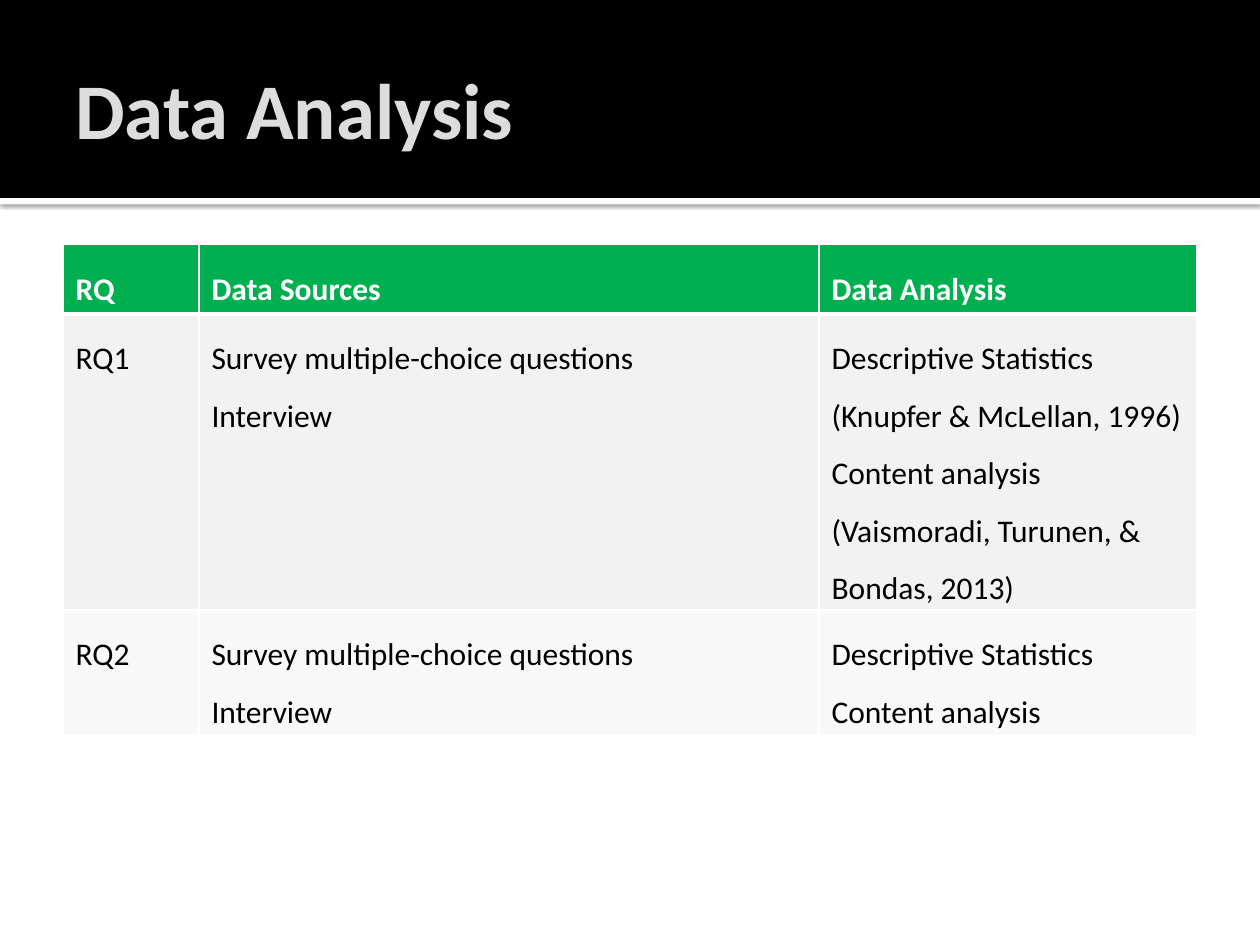
"""Build the Data Analysis slide: a black title band over a table of research questions."""
from lxml import etree
from pptx import Presentation
from pptx.dml.color import RGBColor
from pptx.enum.shapes import MSO_SHAPE
from pptx.enum.text import MSO_ANCHOR
from pptx.oxml import parse_xml
from pptx.util import Cm, Pt

RECT = MSO_SHAPE.RECTANGLE
MIDDLE = MSO_ANCHOR.MIDDLE
NS = 'xmlns:a="http://schemas.openxmlformats.org/drawingml/2006/main"'


def rgb(value):
    return RGBColor.from_string(value)


def add_text(tf, lines, size=18, color="000000", bold=False, spacing=1.0):
    for i, line in enumerate(lines):
        p = tf.paragraphs[0] if i == 0 else tf.add_paragraph()
        p.line_spacing = spacing
        r = p.add_run()
        r.text = line
        r.font.name = "Calibri"
        r.font.size = Pt(size)
        r.font.bold = bold
        r.font.color.rgb = rgb(color)


prs = Presentation()
prs.slide_width, prs.slide_height = Cm(25.4), Cm(19.05)
s = prs.slides.add_slide(prs.slide_layouts[6])

for top, height, color in [(3.99, 0.13, "FFFFFF"), (0, 3.99, "000000")]:
    sp = s.shapes.add_shape(RECT, 0, Cm(top), prs.slide_width, Cm(height))
    sp.shadow.inherit = False
    sp.fill.solid()
    sp.fill.fore_color.rgb = rgb(color)
    sp.line.fill.background()

strip = s.shapes[0]
strip.shadow.inherit = False
effects = strip.element.spPr.find("{*}effectLst")
effects.append(parse_xml(
    f'<a:outerShdw {NS} blurRad="31750" dist="10160" dir="5400000" rotWithShape="0">'
    '<a:srgbClr val="000000"><a:alpha val="60000"/></a:srgbClr></a:outerShdw>'))

title = s.shapes.add_textbox(Cm(1.27), Cm(0.43), Cm(22.86), Cm(3.48))
tf = title.text_frame
tf.word_wrap = True
tf.vertical_anchor = MIDDLE
tf.margin_left = Cm(0.25)
tf.margin_right = tf.margin_top = tf.margin_bottom = Cm(0.13)
add_text(tf, ["Data Analysis"], size=45, color="DDDDDD", bold=True)

sources = ["Survey multiple-choice questions", "Interview"]
rows = [
    (["RQ"], ["Data Sources"], ["Data Analysis"]),
    (["RQ1"], sources, ["Descriptive Statistics (Knupfer & McLellan, 1996)",
                        "Content analysis (Vaismoradi, Turunen, & Bondas, 2013)"]),
    (["RQ2"], sources, ["Descriptive Statistics", "Content analysis"]),
]
fills = ["00B050", "F2F2F2", "F9F9F9"]
widths = [2.74, 12.5, 7.62]
row_height = Cm(1.04)

table = s.shapes.add_table(len(rows), len(widths), Cm(1.27), Cm(4.93),
                           Cm(sum(widths)), row_height * len(rows)).table
for column, width in zip(table.columns, widths):
    column.width = Cm(width)

for i, (row, fill) in enumerate(zip(rows, fills)):
    table.rows[i].height = row_height
    header = i == 0
    for j, lines in enumerate(row):
        cell = table.cell(i, j)
        cell.fill.solid()
        cell.fill.fore_color.rgb = rgb(fill)
        add_text(cell.text_frame, lines, color="FFFFFF" if header else "000000",
                 bold=header, spacing=1.5)
        tcPr = cell._tc.get_or_add_tcPr()
        for k, side in enumerate("LRTB"):
            heavy = (i, side) in [(0, "B"), (1, "T")]
            ln = etree.fromstring(
                f'<a:ln{side} {NS} w="{Pt(3 if heavy else 1)}"><a:solidFill>'
                f'<a:srgbClr val="FFFFFF"/></a:solidFill></a:ln{side}>')
            tcPr.insert(k, ln)

prs.save("out.pptx")
